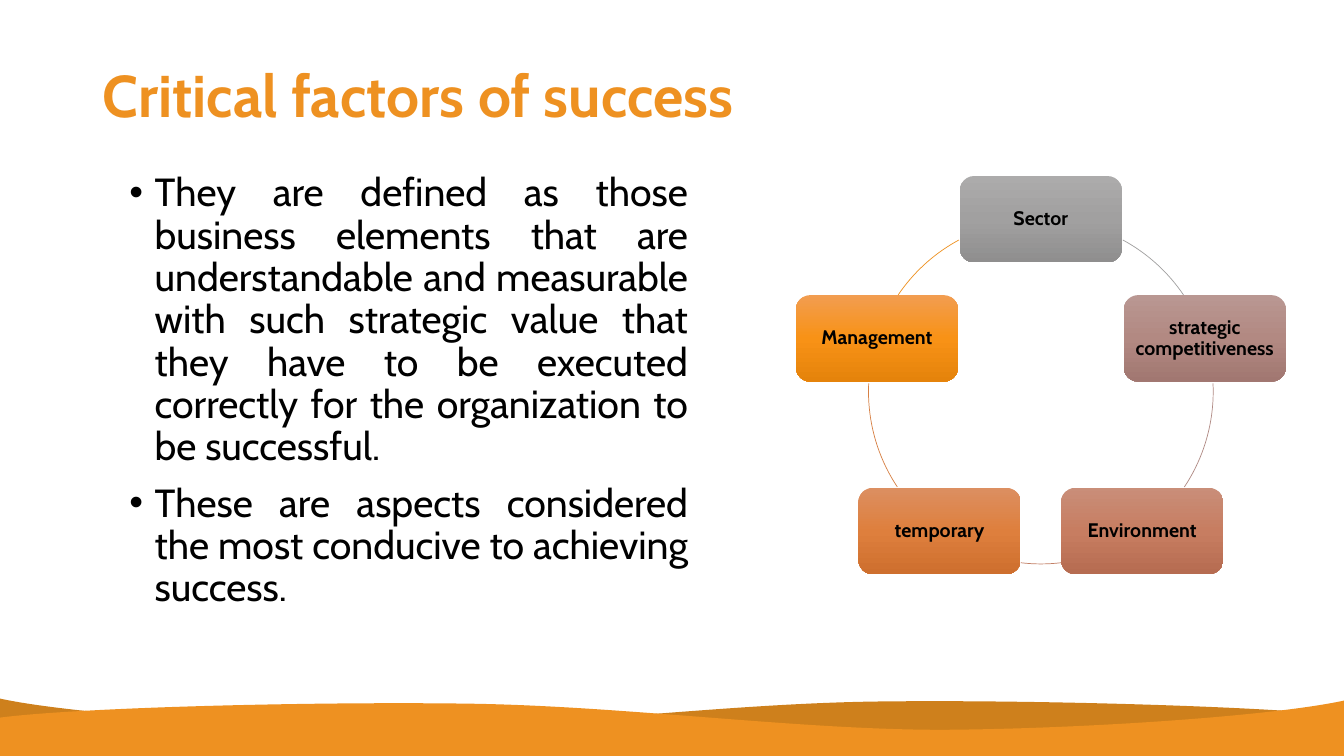
from copy import deepcopy
from math import cos, radians, sin

from pptx import Presentation
from pptx.dml.color import RGBColor
from pptx.enum import shapes, text
from pptx.oxml import ns
from pptx.util import Pt

FONT = "Cabin"
BLACK = RGBColor(0x00, 0x00, 0x00)
ORANGE = RGBColor(0xEE, 0x91, 0x21)
DARK_ORANGE = RGBColor(0xCE, 0x80, 0x1C)

# Slide and cycle geometry, in points
WIDTH, HEIGHT = 960, 540
CENTER_X, CENTER_Y, RADIUS = 743.5, 279.7, 123.1
BOX_WIDTH, BOX_HEIGHT = 115.9, 61.7

# Waves: start point, then curves of two control points and an end point
DARK_WAVE = (960, 511.2), [
    ((904.3, 504.7), (738.7, 499.7), (626.4, 501.1)),
    ((514.8, 502.6), (391, 519.8), (286.6, 519.8)),
    ((182.2, 519.1), (49, 509.8), (0, 499)),
]
FRONT_WAVE = (0, 512.6), [
    ((54.7, 505.4), (220.3, 501.1), (332.6, 502.6)),
    ((445, 504), (568.1, 521.3), (673.2, 521.3)),
    ((777.6, 520.6), (910.8, 511.2), (960, 500.4)),
]

# Factors clockwise from the top: name, gradient, following arc's colour and angles
FACTORS = [
    ("Sector", "ACABAB A1A0A0 8F8E8E", "A1A0A0", 298.4, 325.9),
    ("strategic competitiveness", "B99792 B28982 A17771", "B08A84", 357.3, 33.6),
    ("Environment", "C98E79 C77D61 B66C51", "C27F65", 83.3, 96.7),
    ("temporary", "DC8F61 DE7F3D CE6F2E", "D78044", 146.4, 182.7),
    ("Management", "F29D50 F89216 E5830B", "EE9120", 214.1, 241.6),
]

BULLETS = [
    "They are defined as those business elements that are understandable and "
    "measurable with such strategic value that they have to be executed "
    "correctly for the organization to be successful.",
    "These are aspects considered the most conducive to achieving success.",
]


def apply(target, values):
    for name, value in values.items():
        setattr(target, name, value)


def place(shape, left, top, width, height):
    apply(shape, {"left": Pt(left), "top": Pt(top),
                  "width": Pt(width), "height": Pt(height)})


def write(para, words, size, color, bold, align, **spacing):
    apply(para, {"alignment": align, "line_spacing": 0.9, **spacing})
    span = para.add_run()
    span.text = words
    apply(span.font, {"name": FONT, "size": Pt(size), "bold": bold})
    span.font.color.rgb = color


def add_bullet(para):
    props = para._p.get_or_add_pPr()
    props.set("marL", str(Pt(18)))
    props.set("indent", str(Pt(-18)))
    props.append(props.makeelement(ns.qn("a:buChar"), {"char": "•"}))


def bend_lines(shape, curves):
    """Turn the first straight segments of a freeform into Bézier curves."""
    segments = shape.element.findall(".//" + ns.qn("a:lnTo"))
    for segment, (first, second, _) in zip(segments, curves):
        segment.tag = ns.qn("a:cubicBezTo")
        for index, (x, y) in enumerate((first, second)):
            point = segment.makeelement(ns.qn("a:pt"), {
                "x": str(Pt(x) - shape.left), "y": str(Pt(y) - shape.top)})
            segment.insert(index, point)


def add_wave(page, wave, color):
    start, curves = wave
    ends = [curve[-1] for curve in curves]
    corners = [(ends[-1][0], HEIGHT), (start[0], HEIGHT)]
    builder = page.shapes.build_freeform(Pt(start[0]), Pt(start[1]))
    builder.add_line_segments([(Pt(x), Pt(y)) for x, y in ends + corners], close=True)
    shape = builder.convert_to_shape()
    bend_lines(shape, curves)
    shape.shadow.inherit = False
    shape.fill.solid()
    shape.fill.fore_color.rgb = color
    shape.line.fill.background()
    # Waves lie behind the text
    page.shapes.title.element.addprevious(shape.element)


def fill_gradient(shape, colors):
    shape.fill.gradient()
    shape.fill.gradient_angle = 270
    stop_list = shape.element.find(".//" + ns.qn("a:gsLst"))
    stop_list.append(deepcopy(stop_list[-1]))
    for stop, position, color in zip(shape.fill.gradient_stops, (0, 0.5, 1), colors.split()):
        stop.position = position
        stop.color.rgb = RGBColor.from_string(color)


def add_factor(page, index, name, colors):
    angle = radians(index * 360 / len(FACTORS))
    shape = page.shapes.add_shape(
        shapes.MSO_SHAPE.ROUNDED_RECTANGLE,
        Pt(CENTER_X + RADIUS * sin(angle) - BOX_WIDTH / 2),
        Pt(CENTER_Y - RADIUS * cos(angle) - BOX_HEIGHT / 2),
        Pt(BOX_WIDTH), Pt(BOX_HEIGHT))
    shape.shadow.inherit = False
    shape.line.fill.background()
    fill_gradient(shape, colors)
    frame = shape.text_frame
    sides = ("left", "top", "right", "bottom")
    apply(frame, {f"margin_{side}": Pt(4) for side in sides})
    apply(frame, {"word_wrap": True, "vertical_anchor": text.MSO_ANCHOR.MIDDLE})
    write(frame.paragraphs[0], name, 14, BLACK, True, text.PP_ALIGN.CENTER)


def add_arc(page, color, start, end):
    arc = page.shapes.add_shape(
        shapes.MSO_SHAPE.ARC, Pt(CENTER_X - RADIUS), Pt(CENTER_Y - RADIUS),
        Pt(2 * RADIUS), Pt(2 * RADIUS))
    # Angles are stored in 1/60000 degree, adjustments in 1/100000
    arc.adjustments[0] = start * 0.6
    arc.adjustments[1] = end * 0.6
    arc.shadow.inherit = False
    arc.fill.background()
    arc.line.color.rgb = RGBColor.from_string(color)
    arc.line.width = Pt(0.5)


def main():
    deck = Presentation()
    apply(deck, {"slide_width": Pt(WIDTH), "slide_height": Pt(HEIGHT)})
    page = deck.slides.add_slide(deck.slide_layouts[1])

    # Waves along the bottom
    add_wave(page, DARK_WAVE, DARK_ORANGE)
    add_wave(page, FRONT_WAVE, ORANGE)

    # Title
    title = page.shapes.title
    place(title, 66, 18, 828, 104.4)
    apply(title.text_frame, {"vertical_anchor": text.MSO_ANCHOR.MIDDLE,
                             "auto_size": text.MSO_AUTO_SIZE.NONE})
    write(title.text_frame.paragraphs[0], "Critical factors of success",
          42, ORANGE, True, text.PP_ALIGN.LEFT)

    # Bulleted definition
    body = page.placeholders[1]
    place(body, 85.3, 119.9, 413.3, 319.7)
    frame = body.text_frame
    frame.auto_size = text.MSO_AUTO_SIZE.NONE
    for index, words in enumerate(BULLETS):
        para = frame.add_paragraph() if index else frame.paragraphs[0]
        write(para, words, 28, BLACK, False, text.PP_ALIGN.JUSTIFY, space_before=Pt(10))
        add_bullet(para)

    # Cycle of factors
    for index, (name, colors, arc_color, start, end) in enumerate(FACTORS):
        add_factor(page, index, name, colors)
        add_arc(page, arc_color, start, end)

    deck.save("out.pptx")


if __name__ == "__main__":
    main()
